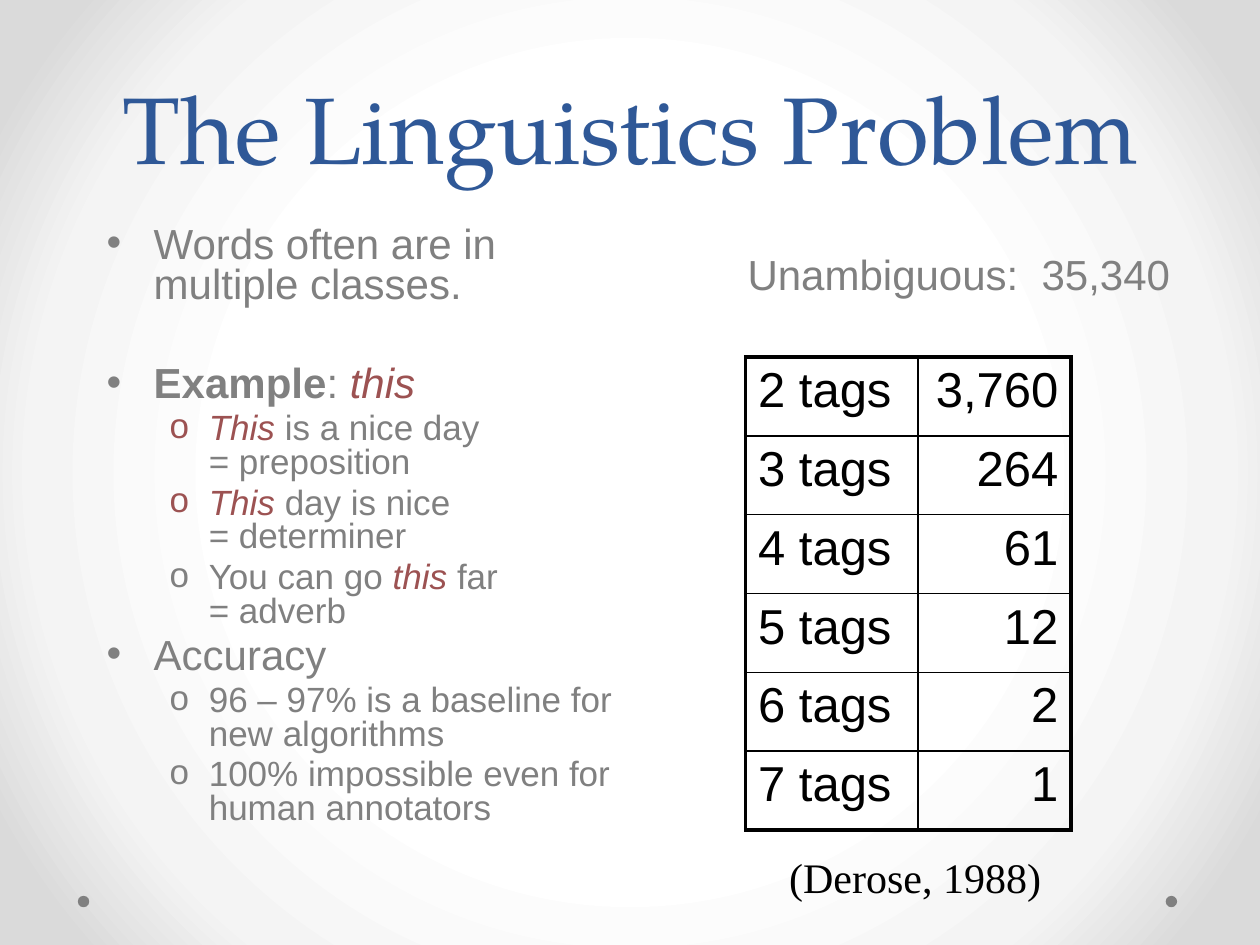
from lxml import etree
from pptx import Presentation
from pptx.dml.color import RGBColor
from pptx.enum.shapes import MSO_SHAPE
from pptx.enum.text import MSO_ANCHOR, PP_ALIGN
from pptx.oxml import parse_xml
from pptx.oxml.ns import nsdecls, qn
from pptx.util import Cm, Pt

OVAL = MSO_SHAPE.OVAL
BOTTOM = MSO_ANCHOR.BOTTOM
CENTER, LEFT, RIGHT = PP_ALIGN.CENTER, PP_ALIGN.LEFT, PP_ALIGN.RIGHT

GRAY, RED, BLUE, BLACK = "808080", "9C5252", "2F5897", "000000"
GLOW = [(0, "FFFFFF"), (50, "FFFFFF"), (76, "F4F4F4"), (92, "DADADA"), (100, "DADADA")]
PLAIN = {"size": Pt(24), "name": "Arial", "bold": False, "italic": False}
TOPIC = {"size": 24, "bullet": "•", "left": 0.95, "hang": 0.95}
DETAIL = {"size": 20, "bullet": "o", "left": 2.06, "hang": 0.79}
STRONG, WORD = {"bold": True}, {"italic": True, "color": RED}

OUTLINE = [
    (TOPIC, [("Words often are in multiple classes.", {})], 29),
    (TOPIC, [("Example", STRONG), (": ", {}), ("this", WORD)], 0),
    (DETAIL, [("This", WORD), (" is a nice day\n= preposition", {})], 0),
    (DETAIL, [("This", WORD), (" day is nice\n= determiner", {})], 0),
    (DETAIL, [("You can go ", {}), ("this", WORD), (" far\n= adverb", {})], 0),
    (TOPIC, [("Accuracy", {})], 0),
    (DETAIL, [("96 – 97% is a baseline for new algorithms", {})], 0),
    (DETAIL, [("100% impossible even for human annotators", {})], 0),
]
TAG_COUNTS = [
    ("2 tags", "3,760"),
    ("3 tags", "264"),
    ("4 tags", "61"),
    ("5 tags", "12"),
    ("6 tags", "2"),
    ("7 tags", "1"),
]


def rgb(value):
    """Turn a hex string into a colour."""
    return RGBColor.from_string(value)


def apply(target, values):
    """Set every attribute named in a dict of format values."""
    for name, value in values.items():
        setattr(target, name, value)


def write(paragraph, wording, color=GRAY, **font):
    """Add a formatted run, breaking the line at each newline."""
    for number, line in enumerate(wording.split("\n")):
        if number:
            paragraph.add_line_break()
        run = paragraph.add_run()
        run.text = line
        apply(run.font, PLAIN | font)
        run.font.color.rgb = rgb(color)


def add_frame(slide, box, wrap=True):
    """Add a text box and return its text frame."""
    frame = slide.shapes.add_textbox(*map(Cm, box)).text_frame
    frame.word_wrap = wrap
    return frame


def add_background(slide):
    """Fill the background with a glow that darkens towards the corners."""
    stops = "".join(
        f'<a:gs pos="{place * 1000}"><a:srgbClr val="{color}"/></a:gs>' for place, color in GLOW
    )
    background = parse_xml(
        f'<p:bg {nsdecls("p", "a")}><p:bgPr><a:gradFill rotWithShape="1">'
        f'<a:gsLst>{stops}</a:gsLst><a:path path="circle">'
        '<a:fillToRect l="50000" t="50000" r="50000" b="50000"/></a:path>'
        "</a:gradFill><a:effectLst/></p:bgPr></p:bg>"
    )
    slide.element.cSld.insert(0, background)


def add_dots(slide, box):
    """Put a dot at each end of the box."""
    left, top, width, size = box
    for dot_left in (left, left + width - size):
        dot = slide.shapes.add_shape(OVAL, *map(Cm, (dot_left, top, size, size)))
        dot.shadow.inherit = False
        dot.fill.solid()
        dot.fill.fore_color.rgb = rgb(GRAY)
        dot.line.fill.background()


def add_title(slide, box):
    """Write the slide title on the bottom of its box."""
    frame = add_frame(slide, box)
    frame.vertical_anchor = BOTTOM
    paragraph = frame.paragraphs[0]
    apply(paragraph, {"alignment": CENTER, "line_spacing": Pt(58)})
    write(paragraph, "The Linguistics Problem", BLUE, size=Pt(54), name="TeX Gyre Pagella")


def add_outline(slide, box):
    """Write the bulleted topics and their details."""
    frame = add_frame(slide, box)
    for number, (level, runs, gap) in enumerate(OUTLINE):
        paragraph = frame.add_paragraph() if number else frame.paragraphs[0]
        spacing = {
            "line_spacing": 0.8,
            "space_before": Pt(level["size"] * 0.2),
            "space_after": Pt(gap),
            "level": int(level is DETAIL),
        }
        apply(paragraph, spacing)
        properties = paragraph._p.get_or_add_pPr()
        properties.set("marL", str(Cm(level["left"])))
        properties.set("indent", str(-Cm(level["hang"])))
        etree.SubElement(properties, qn("a:buFont")).set("typeface", "Arial")
        etree.SubElement(properties, qn("a:buChar")).set("char", level["bullet"])
        for wording, style in runs:
            write(paragraph, wording, **({"size": Pt(level["size"])} | style))


def add_border(cell, side, points):
    """Draw one side of a table cell."""
    border = etree.SubElement(cell._tc.get_or_add_tcPr(), qn(f"a:ln{side}"), w=str(Pt(points)))
    fill = etree.SubElement(border, qn("a:solidFill"))
    etree.SubElement(fill, qn("a:srgbClr"), val=BLACK)


def add_tag_table(slide, box):
    """Tabulate the word counts by number of tags, with a heavy outer frame."""
    width, last = box[2], len(TAG_COUNTS) - 1
    table = slide.shapes.add_table(len(TAG_COUNTS), 2, *map(Cm, box)).table
    apply(table, {"first_row": False, "horz_banding": False})
    for column, share in zip(table.columns, (0.53, 0.47)):
        column.width = Cm(width * share)
    for row, entries in enumerate(TAG_COUNTS):
        for column, entry in enumerate(entries):
            cell = table.cell(row, column)
            paragraph = cell.text_frame.paragraphs[0]
            apply(paragraph, {"alignment": RIGHT if column else LEFT, "space_before": Pt(5.6)})
            write(paragraph, entry, BLACK, size=Pt(28))
            outer = {"L": column == 0, "R": column == 1, "T": row == 0, "B": row == last}
            for side, heavy in outer.items():
                add_border(cell, side, 2.25 if heavy else 1)
            cell.fill.background()


def add_unambiguous(slide, box):
    """State the count of unambiguous words."""
    paragraph = add_frame(slide, box).paragraphs[0]
    apply(paragraph, {"line_spacing": 0.8, "space_before": Pt(4.8)})
    write(paragraph, "Unambiguous:  35,340")


def add_citation(slide, box):
    """Cite the study behind the table."""
    paragraph = add_frame(slide, box, wrap=False).paragraphs[0]
    write(paragraph, "(Derose, 1988)", BLACK, name="Times New Roman")


def main():
    """Build and save the slide."""
    deck = Presentation()
    apply(deck, {"slide_width": Cm(25.4), "slide_height": Cm(19.05)})
    slide = deck.slides.add_slide(deck.slide_layouts[6])
    add_background(slide)
    add_dots(slide, (1.57, 18.06, 22.16, 0.23))
    add_title(slide, (1.9, 1.7, 21.6, 2.12))
    add_outline(slide, (1.9, 4.45, 11.22, 12.57))
    add_tag_table(slide, (15.03, 7.2, 6.56, 9.53))
    add_unambiguous(slide, (14.82, 5.08, 10.58, 1.69))
    add_citation(slide, (15.66, 17.04, 5.6, 1.27))
    deck.save("out.pptx")


if __name__ == "__main__":
    main()
